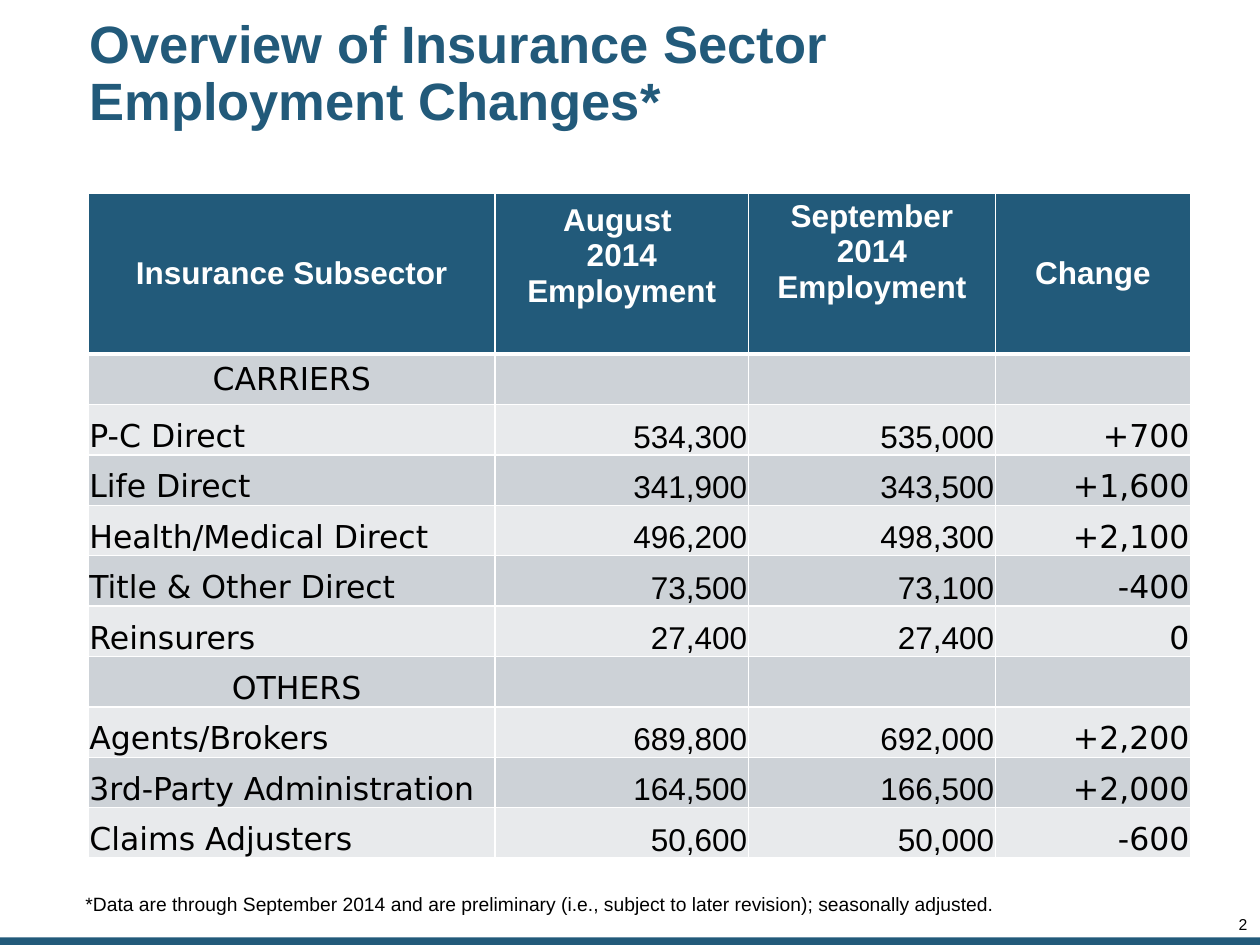
from lxml import etree
from pptx import Presentation
from pptx import util as u
from pptx.dml.color import RGBColor
from pptx.enum import shapes, text
from pptx.oxml import ns

WIDTH, HEIGHT = 10, 7.5
BLUE, WHITE, BLACK = "225A7A", "FFFFFF", "000000"
BANDS = ["CDD2D7", "E8EAEC"]
SANS, DATA_SANS = "Arial", "DejaVu Sans"
LEFT, CENTER, RIGHT = text.PP_ALIGN.LEFT, text.PP_ALIGN.CENTER, text.PP_ALIGN.RIGHT
TOP, MIDDLE, BOTTOM = text.MSO_ANCHOR.TOP, text.MSO_ANCHOR.MIDDLE, text.MSO_ANCHOR.BOTTOM

COLUMN_WIDTHS = [3.23, 2.01, 1.96, 1.55]
HEADER_HEIGHT, ROW_HEIGHT = 1.28, 0.4
HEADER_MARGINS = (0.1, 0.05, 0.1, 0.05)
DATA_MARGINS = (0.01, 0.01, 0.01, 0)

# Header cells: paragraphs, anchor, bottom margin
HEADERS = [
    (["Insurance Subsector"], MIDDLE, 0.05),
    (["August \n2014", "Employment"], MIDDLE, 0.33),
    (["September 2014", "Employment"], TOP, 0.05),
    (["Change"], MIDDLE, 0.05),
]
# A row with a single entry is a section heading
ROWS = [
    ["CARRIERS"],
    ["P-C Direct", "534,300", "535,000", "+700"],
    ["Life Direct", "341,900", "343,500", "+1,600"],
    ["Health/Medical Direct", "496,200", "498,300", "+2,100"],
    ["Title & Other Direct", "73,500", "73,100", "-400"],
    ["Reinsurers", "27,400", "27,400", "0"],
    [" OTHERS"],
    ["Agents/Brokers", "689,800", "692,000", "+2,200"],
    ["3rd-Party Administration", "164,500", "166,500", "+2,000"],
    ["Claims Adjusters", "50,600", "50,000", "-600"],
]


def color(value):
    return RGBColor.from_string(value)


def write(paragraph, content, size, font=SANS, fill=BLACK, bold=False, align=LEFT):
    paragraph.alignment = align
    for index, line in enumerate(content.split("\n")):
        if index:
            paragraph.add_line_break()
        run = paragraph.add_run()
        run.text = line
        run.font.size = u.Pt(size)
        run.font.name = font
        run.font.bold = bold
        run.font.color.rgb = color(fill)


def set_margins(target, margins):
    (target.margin_left, target.margin_top,
     target.margin_right, target.margin_bottom) = map(u.Inches, margins)


def place(shape, left, top, width, height):
    shape.left, shape.top = u.Inches(left), u.Inches(top)
    shape.width, shape.height = u.Inches(width), u.Inches(height)


def add_title(slide, content):
    title = slide.shapes.title
    place(title, 0.66, 0.25, 7.75, 0.69)
    frame = title.text_frame
    frame.word_wrap = True
    frame.auto_size = text.MSO_AUTO_SIZE.NONE
    frame.vertical_anchor = MIDDLE
    set_margins(frame, (0.05,) * 4)
    paragraph = frame.paragraphs[0]
    paragraph.line_spacing = 0.9
    write(paragraph, content, 30, fill=BLUE, bold=True)


def add_text(slide, box, content, size, margins=HEADER_MARGINS, align=LEFT, spacing=1.0):
    frame = slide.shapes.add_textbox(*map(u.Inches, box)).text_frame
    frame.word_wrap = True
    set_margins(frame, margins)
    frame.paragraphs[0].line_spacing = spacing
    write(frame.paragraphs[0], content, size, align=align)


def add_bar(slide):
    thickness = 0.06
    bar = slide.shapes.add_shape(
        shapes.MSO_SHAPE.RECTANGLE, 0, u.Inches(HEIGHT - thickness),
        u.Inches(WIDTH), u.Inches(thickness))
    bar.shadow.inherit = False
    bar.fill.solid()
    bar.fill.fore_color.rgb = color(BLUE)
    bar.line.fill.background()


def set_borders(cell, top=1, bottom=1):
    properties = cell._tc.get_or_add_tcPr()
    sides = [("lnL", 1), ("lnR", 1), ("lnT", top), ("lnB", bottom)]
    for index, (side, points) in enumerate(sides):
        line = etree.Element(ns.qn(f"a:{side}"), w=str(u.Pt(points)))
        fill = etree.SubElement(line, ns.qn("a:solidFill"))
        etree.SubElement(fill, ns.qn("a:srgbClr"), val=WHITE)
        properties.insert(index, line)


def style_cell(cell, fill, margins, anchor, **borders):
    cell.fill.solid()
    cell.fill.fore_color.rgb = color(fill)
    set_margins(cell, margins)
    cell.vertical_anchor = anchor
    set_borders(cell, **borders)


def fill_header(table):
    for column, (lines, anchor, bottom_margin) in enumerate(HEADERS):
        cell = table.cell(0, column)
        style_cell(cell, BLUE, HEADER_MARGINS[:3] + (bottom_margin,), anchor, bottom=3)
        frame = cell.text_frame
        for index, line in enumerate(lines):
            paragraph = frame.add_paragraph() if index else frame.paragraphs[0]
            write(paragraph, line, 18, fill=WHITE, bold=True, align=CENTER)


def fill_rows(table):
    for row, entries in enumerate(ROWS, start=1):
        is_section = len(entries) == 1
        for column in range(len(COLUMN_WIDTHS)):
            cell = table.cell(row, column)
            style_cell(cell, BANDS[(row - 1) % 2], DATA_MARGINS,
                       MIDDLE if row == 1 else BOTTOM, top=3 if row == 1 else 1)
            if column >= len(entries):
                continue
            align = CENTER if is_section else RIGHT if column else LEFT
            font = SANS if column in (1, 2) else DATA_SANS
            write(cell.text_frame.paragraphs[0], entries[column], 18, font, align=align)


def add_employment_table(slide):
    height = HEADER_HEIGHT + ROW_HEIGHT * len(ROWS)
    table = slide.shapes.add_table(
        len(ROWS) + 1, len(COLUMN_WIDTHS), u.Inches(0.7), u.Inches(1.53),
        u.Inches(sum(COLUMN_WIDTHS)), u.Inches(height)).table
    for column, width in zip(table.columns, COLUMN_WIDTHS):
        column.width = u.Inches(width)
    for index, row in enumerate(table.rows):
        row.height = u.Inches(ROW_HEIGHT if index else HEADER_HEIGHT)
    fill_header(table)
    fill_rows(table)


def main():
    presentation = Presentation()
    presentation.slide_width = u.Inches(WIDTH)
    presentation.slide_height = u.Inches(HEIGHT)
    slide = presentation.slides.add_slide(presentation.slide_layouts[5])

    # Footer bar and page number
    add_bar(slide)
    add_text(slide, (9.41, 7.28, 0.49, 0.13), "2", 9,
             margins=(0,) * 4, align=RIGHT, spacing=0.85)

    # Title, table and footnote
    add_title(slide, "Overview of Insurance Sector Employment Changes*")
    add_employment_table(slide)
    add_text(slide, (0.58, 7.03, 9.04, 0.28),
             "*Data are through September 2014 and are preliminary "
             "(i.e., subject to later revision); seasonally adjusted.", 11)

    presentation.save("out.pptx")


if __name__ == "__main__":
    main()
